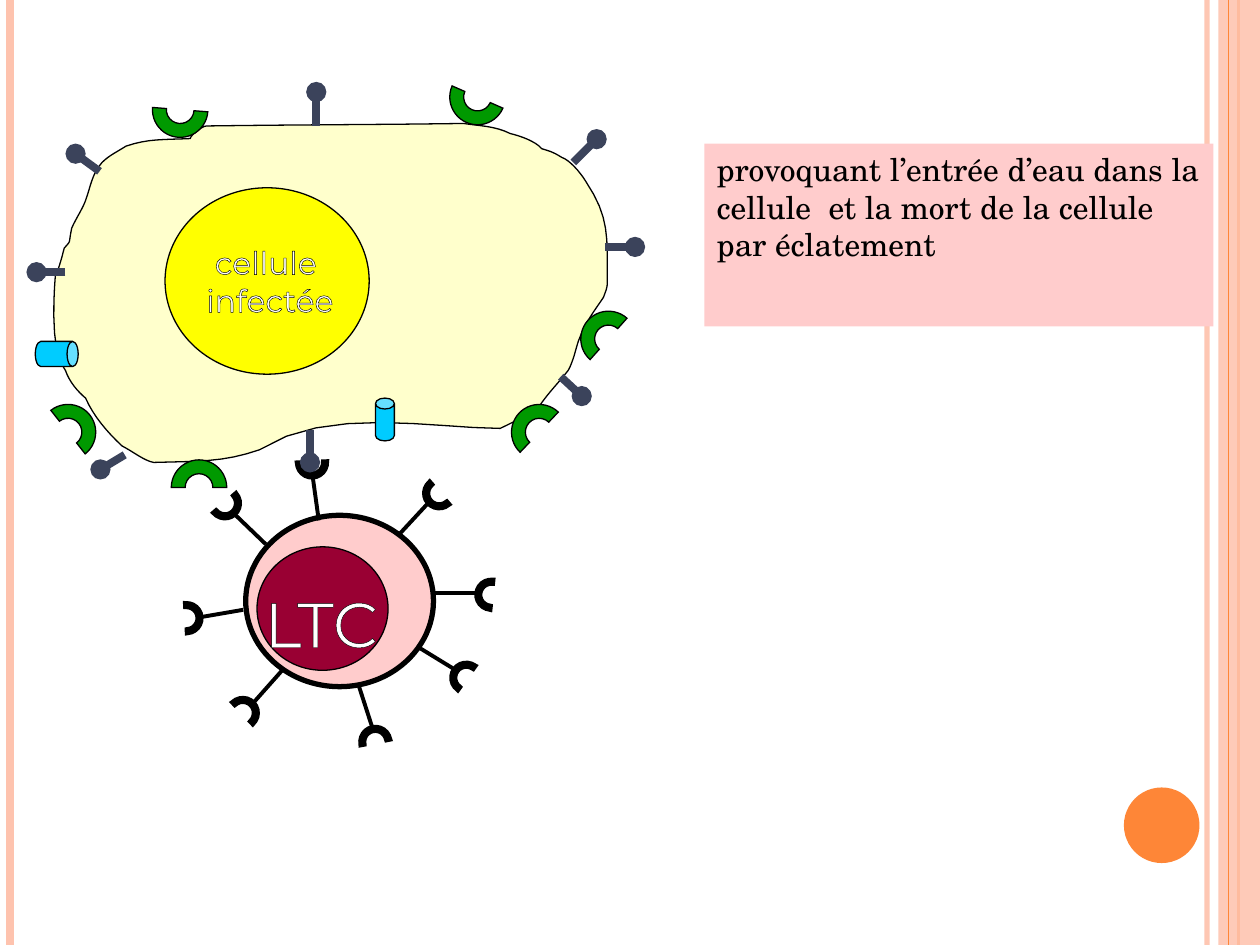
from dataclasses import dataclass
from math import cos, hypot, radians, sin

from lxml.etree import SubElement
from pptx import Presentation
from pptx.dml.color import RGBColor
from pptx.enum.shapes import MSO_CONNECTOR, MSO_SHAPE
from pptx.enum.text import MSO_ANCHOR, PP_ALIGN
from pptx.oxml import parse_xml
from pptx.oxml.ns import nsdecls, qn
from pptx.util import Inches, Pt

@dataclass(frozen=True)
class Theme:
    salmon: str = "FEC3AE"
    orange: str = "FE8637"
    pink: str = "FFCCCC"
    crimson: str = "990033"
    cream: str = "FFFFCC"
    yellow: str = "FFFF00"
    green: str = "009900"
    slate: str = "3B435B"
    cyan: str = "00CCFF"
    black: str = "000000"
    white: str = "FFFFFF"
    label_font: str = "Montserrat"
    body_font: str = "TeX Gyre Schola"
    body_size: int = 18
    lymphocyte_size: int = 36

THEME = Theme()
CAPTION = "provoquant l’entrée d’eau dans la cellule  et la mort de la cellule par éclatement"
# Labels: lines, box, size
LYMPHOCYTE_LABEL = (["LTC"], (1.8, 4.59, 1.5, 0.7), THEME.lymphocyte_size)
INFECTED_LABEL = (["cellule", " infectée"], (1.21, 1.88, 1.8, 0.69), THEME.body_size)
# Vertical rules: x, colour, width, opacity
RULES_BEHIND_BAND = [(9.58, THEME.salmon, 3, 93), (0.08, THEME.salmon, 4.5, 100),
                     (9.83, THEME.orange, 1.5, 100)]
RULE_ON_BAND = (9.75, THEME.orange, 0.75, 100)
# Lymphocyte receptors: stem start, stem tip, rotation of the cup
RECEPTORS = [
    ((2.53, 4.13), (2.48, 3.77), 177.6), ((2.11, 4.32), (1.85, 4.07), 139.2),
    ((1.93, 4.84), (1.58, 4.90), 86.4), ((2.24, 5.32), (2.00, 5.59), 46.8),
    ((3.31, 5.13), (3.62, 5.32), 305.9), ((2.85, 5.45), (2.96, 5.79), 349),
    ((3.44, 4.71), (3.80, 4.71), 275.7), ((3.16, 4.25), (3.41, 3.98), 229.2),
]
# Membrane arcs of the infected cell: centre, rotation
MEMBRANE_ARCS = [
    ((1.58, 3.87), 0), ((4.83, 2.69), 311.7), ((3.79, 0.77), 203.6),
    ((0.54, 3.43), 51.8), ((4.28, 3.43), 313.6), ((1.43, 0.87), 184.5),
]
# Antigens on the infected cell: stem start, stem tip
ANTIGENS = [
    ((2.51, 1.00), (2.51, 0.78)), ((2.46, 3.41), (2.46, 3.62)),
    ((0.79, 1.36), (0.64, 1.25)), ((0.99, 3.61), (0.84, 3.70)),
    ((0.52, 2.16), (0.34, 2.16)), ((4.80, 1.96), (4.99, 1.96)),
    ((4.45, 2.99), (4.58, 3.11)), ((4.55, 1.29), (4.70, 1.14)),
]
# Channels: box, rotation, cap depth
CHANNELS = [((2.98, 3.16, 0.15, 0.34), 0, 0.58), ((0.35, 2.64, 0.20, 0.34), 90, 0.44)]
# Membrane outline: start, then cubic curves as (control, control, end)
MEMBRANE_START = (1.51, 1.10)
MEMBRANE_CURVES = [
    ((1.29, 1.11), (1.18, 1.10), (1.00, 1.16)), ((0.94, 1.20), (0.87, 1.23), (0.81, 1.29)),
    ((0.73, 1.38), (0.72, 1.48), (0.68, 1.59)), ((0.66, 1.65), (0.60, 1.74), (0.57, 1.81)),
    ((0.54, 1.95), (0.57, 1.90), (0.51, 1.97)), ((0.50, 2.01), (0.47, 2.13), (0.44, 2.19)),
    ((0.44, 2.19), (0.38, 2.80), (0.52, 2.94)), ((0.55, 3.03), (0.62, 3.11), (0.68, 3.16)),
    ((0.74, 3.30), (0.86, 3.44), (0.97, 3.54)), ((1.05, 3.58), (1.15, 3.66), (1.22, 3.67)),
    ((1.57, 3.66), (1.77, 3.67), (2.06, 3.57)), ((2.59, 3.22), (3.45, 3.40), (3.97, 3.40)),
    ((4.10, 3.34), (4.23, 3.27), (4.29, 3.21)), ((4.36, 3.11), (4.44, 3.03), (4.51, 2.94)),
    ((4.55, 2.87), (4.57, 2.77), (4.59, 2.71)), ((4.65, 2.55), (4.71, 2.48), (4.79, 2.36)),
    ((4.80, 2.33), (4.82, 2.29), (4.82, 2.25)), ((4.82, 1.87), (4.84, 1.73), (4.65, 1.44)),
    ((4.60, 1.36), (4.52, 1.27), (4.46, 1.25)), ((4.38, 1.20), (4.36, 1.20), (4.30, 1.18)),
    ((4.25, 1.12), (4.13, 1.08), (4.05, 1.06)), ((3.93, 1.00), (3.81, 1.00), (3.68, 0.98)),
    ((3.00, 0.99), (2.32, 0.99), (1.64, 1.00)), ((1.60, 1.00), (1.51, 1.08), (1.51, 1.10)),
]

def set_opacity(properties, percent):
    SubElement(next(properties.iter(qn("a:srgbClr"))), qn("a:alpha"), val=str(percent * 1000))

def style(shape, fill=None, line=None, width=0.75):
    shape.shadow.inherit = False
    shape.fill.background()
    shape.line.fill.background()
    if fill:
        shape.fill.solid()
        shape.fill.fore_color.rgb = RGBColor.from_string(fill)
    if line:
        shape.line.color.rgb = RGBColor.from_string(line)
        shape.line.width = Pt(width)
        SubElement(shape.line._ln, qn("a:miter"), lim="800000")

def add_preset(shapes, preset, box, fill=None, line=None, width=0.75, rotation=0):
    shape = shapes.add_shape(preset, *map(Inches, box))
    shape.rotation = rotation
    style(shape, fill, line, width)
    return shape

def centred_box(center, size):
    return center[0] - size / 2, center[1] - size / 2, size, size

def add_line(shapes, start, end, color, width, opacity=100):
    line = shapes.add_connector(MSO_CONNECTOR.STRAIGHT, *map(Inches, (*start, *end)))
    line.line.color.rgb = RGBColor.from_string(color)
    line.line.width = Pt(width)
    set_opacity(line._element.spPr, opacity)
    SubElement(line._element.spPr, qn("a:effectLst"))

def add_rule(shapes, x, color, width, opacity):
    add_line(shapes, (x, 0), (x, 7.5), color, width, opacity)

def format_paragraph(paragraph, alignment, font, size, color):
    paragraph.alignment = alignment
    run_font = paragraph.runs[0].font
    run_font.name, run_font.size = font, Pt(size)
    run_font.color.rgb = RGBColor.from_string(color)

def add_label(shapes, lines, box, size):
    """White centred text with a thin black outline round each letter."""
    text_frame = shapes.add_textbox(*map(Inches, box)).text_frame
    text_frame.word_wrap = True
    text_frame.text = "\n".join(lines)
    for paragraph in text_frame.paragraphs:
        format_paragraph(paragraph, PP_ALIGN.CENTER, THEME.label_font, size, THEME.white)
        paragraph.runs[0].font._element.insert(0, parse_xml(
            f'<a:ln {nsdecls("a")} w="{Pt(0.75)}"><a:solidFill>'
            f'<a:srgbClr val="{THEME.black}"/></a:solidFill></a:ln>'))

def add_receptor(shapes, start, tip, rotation):
    """Stem whose tip touches the back of an open cup."""
    reach, angle = 0.1, radians(rotation)
    center = tip[0] - reach * sin(angle), tip[1] + reach * cos(angle)
    add_line(shapes, start, tip, THEME.black, 2.25)
    cup = add_preset(shapes, MSO_SHAPE.BLOCK_ARC, centred_box(center, 0.23),
                     line=THEME.black, width=3, rotation=rotation)
    cup.adjustments[2] = 0.1

def add_antigen(shapes, start, tip):
    """Stem with a round head just beyond its tip."""
    dx, dy = tip[0] - start[0], tip[1] - start[1]
    reach = 0.05 / hypot(dx, dy)
    center = tip[0] + reach * dx, tip[1] + reach * dy
    add_line(shapes, start, tip, THEME.slate, 4.5)
    add_preset(shapes, MSO_SHAPE.OVAL, centred_box(center, 0.15), THEME.slate, THEME.slate)

def curve_points(start, curves, steps=8):
    """Points along a chain of cubic Bézier curves, in EMU."""
    for first, second, end in curves:
        for t in (step / steps for step in range(1, steps + 1)):
            weights = (1 - t) ** 3, 3 * t * (1 - t) ** 2, 3 * t * t * (1 - t), t ** 3
            yield tuple(Inches(sum(w * value for w, value in zip(weights, axis)))
                        for axis in zip(start, first, second, end))
        start = end

def add_background(shapes):
    for rule in RULES_BEHIND_BAND:
        add_rule(shapes, *rule)
    band = add_preset(shapes, MSO_SHAPE.RECTANGLE, (9.67, 0, 0.33, 7.5), THEME.salmon)
    set_opacity(band._element.spPr, 87)
    add_rule(shapes, *RULE_ON_BAND)
    add_preset(shapes, MSO_SHAPE.OVAL, (8.92, 6.25, 0.6, 0.6), THEME.orange)

def add_lymphocyte(shapes):
    add_preset(shapes, MSO_SHAPE.OVAL, (1.95, 4.09, 1.49, 1.36), THEME.pink, THEME.black, 3)
    add_preset(shapes, MSO_SHAPE.OVAL, (2.04, 4.34, 1.04, 0.98), THEME.crimson, THEME.black)
    for receptor in RECEPTORS:
        add_receptor(shapes, *receptor)
    add_label(shapes, *LYMPHOCYTE_LABEL)

def add_infected_cell(shapes):
    builder = shapes.build_freeform(*map(Inches, MEMBRANE_START))
    builder.add_line_segments(list(curve_points(MEMBRANE_START, MEMBRANE_CURVES)))
    style(builder.convert_to_shape(), THEME.cream, THEME.black)
    add_preset(shapes, MSO_SHAPE.OVAL, (1.31, 1.49, 1.62, 1.48), THEME.yellow, THEME.black)
    add_label(shapes, *INFECTED_LABEL)
    for center, rotation in MEMBRANE_ARCS:
        add_preset(shapes, MSO_SHAPE.BLOCK_ARC, centred_box(center, 0.44),
                   THEME.green, THEME.black, rotation=rotation)
    for antigen in ANTIGENS:
        add_antigen(shapes, *antigen)
    for box, rotation, depth in CHANNELS:
        can = add_preset(shapes, MSO_SHAPE.CAN, box, THEME.cyan, THEME.black, rotation=rotation)
        can.adjustments[0] = depth

def add_caption(shapes):
    box = add_preset(shapes, MSO_SHAPE.RECTANGLE, (5.59, 1.14, 4.04, 1.45), THEME.pink)
    box.text_frame.word_wrap = True
    box.text_frame.vertical_anchor = MSO_ANCHOR.TOP
    box.text_frame.text = CAPTION
    format_paragraph(box.text_frame.paragraphs[0], PP_ALIGN.LEFT,
                     THEME.body_font, THEME.body_size, THEME.black)

presentation = Presentation()
presentation.slide_width, presentation.slide_height = Inches(10), Inches(7.5)
slide = presentation.slides.add_slide(presentation.slide_layouts[6])
for add_part in (add_background, add_lymphocyte, add_infected_cell, add_caption):
    add_part(slide.shapes)
presentation.save("out.pptx")
